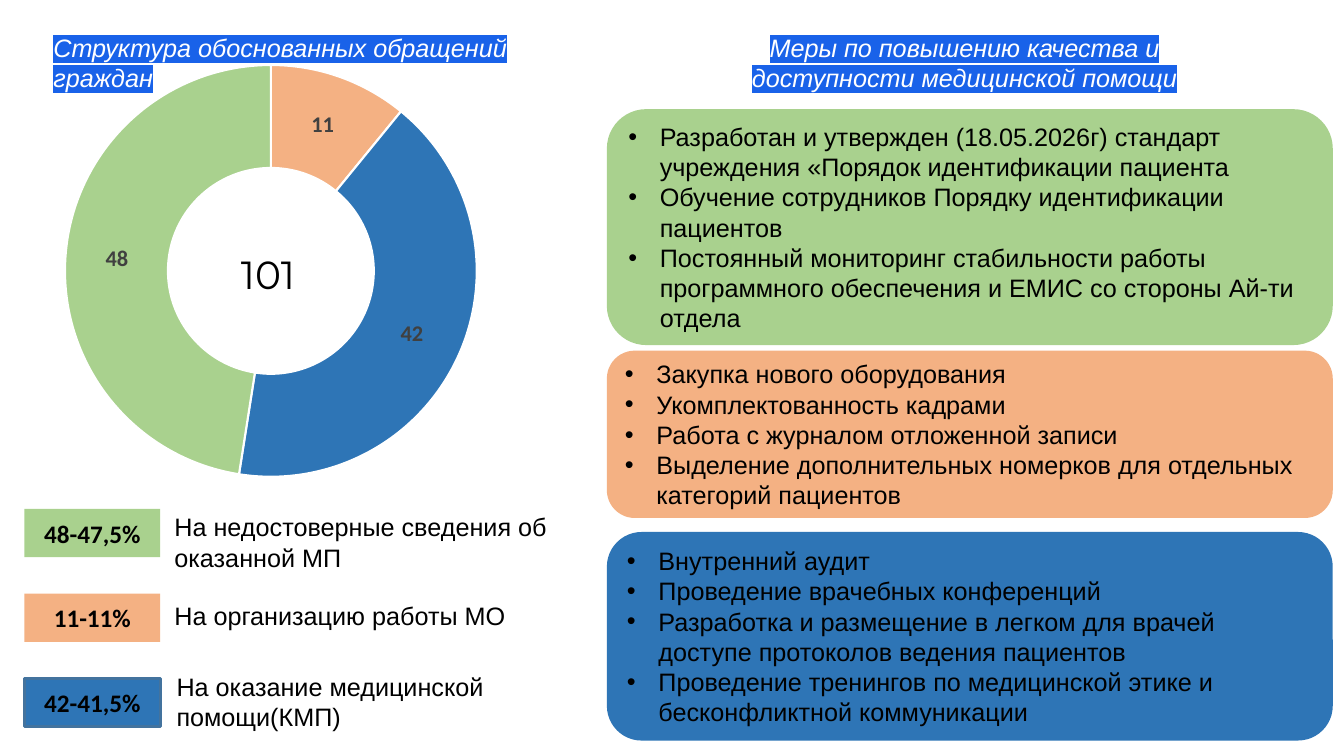
import pptx
import pptx.chart.data
import pptx.dml.color
import pptx.enum.chart
import pptx.enum.shapes
import pptx.enum.text
import pptx.oxml
import pptx.oxml.ns
import pptx.util

Pt = pptx.util.Pt
RGBColor = pptx.dml.color.RGBColor
SHAPES = pptx.enum.shapes.MSO_SHAPE
ALIGN = pptx.enum.text.PP_ALIGN
ANCHOR = pptx.enum.text.MSO_ANCHOR
AUTO_SIZE = pptx.enum.text.MSO_AUTO_SIZE

GREEN = RGBColor(0xA9, 0xD1, 0x8E)
ORANGE = RGBColor(0xF4, 0xB1, 0x83)
BLUE = RGBColor(0x2E, 0x75, 0xB6)
BLUE_EDGE = RGBColor(0x43, 0x73, 0x9E)
HIGHLIGHT = RGBColor(0x19, 0x62, 0xE9)
GREY = RGBColor(0x40, 0x40, 0x40)
BLACK = RGBColor(0, 0, 0)
WHITE = RGBColor(0xFF, 0xFF, 0xFF)


class AppealsSlide:
    """Hold the text style and the slide, and add each kind of element to it."""

    font = "Arial"
    number_font = "Calibri"
    size = 18
    indent = 22.5

    def __init__(self, slide):
        self.slide = slide

    def xml(self, tag, body):
        return pptx.oxml.parse_xml(f"<a:{tag} {pptx.oxml.ns.nsdecls('a')} {body}")

    def add_words(self, paragraph, words, color=BLACK, font=None, size=None,
                  bold=False, italic=False):
        run = paragraph.add_run()
        run.text = words
        run.font.name = font or self.font
        run.font.size = Pt(size or self.size)
        run.font.bold = bold
        run.font.italic = italic
        run.font.color.rgb = color
        return run

    def text(self, box, words, align=ALIGN.LEFT, **style):
        left, top, width, height = box
        frame = self.slide.shapes.add_textbox(Pt(left), Pt(top), Pt(width), Pt(height)).text_frame
        frame.word_wrap = True
        paragraph = frame.paragraphs[0]
        paragraph.alignment = align
        return frame, self.add_words(paragraph, words, **style)

    def title(self, box, words, align):
        run = self.text(box, words, align, color=WHITE, italic=True)[1]
        fill = run._r.get_or_add_rPr().find(pptx.oxml.ns.qn("a:solidFill"))
        fill.addnext(self.xml("highlight", f'><a:srgbClr val="{HIGHLIGHT}"/></a:highlight>'))

    def caption(self, box, words, **style):
        frame = self.text(box, words, **style)[0]
        frame.auto_size = AUTO_SIZE.SHAPE_TO_FIT_TEXT

    def block(self, kind, box, color, edge=None):
        left, top, width, height = box
        block = self.slide.shapes.add_shape(kind, Pt(left), Pt(top), Pt(width), Pt(height))
        block.shadow.inherit = False
        block.fill.solid()
        block.fill.fore_color.rgb = color
        if edge:
            block.line.color.rgb = edge
            block.line.width = Pt(2)
        else:
            block.line.fill.background()
        block.text_frame.word_wrap = True
        block.text_frame.vertical_anchor = ANCHOR.MIDDLE
        return block

    def key(self, box, words, color, edge):
        paragraph = self.block(SHAPES.RECTANGLE, box, color, edge).text_frame.paragraphs[0]
        paragraph.alignment = ALIGN.CENTER
        self.add_words(paragraph, words, font=self.number_font, bold=True)

    def measures(self, box, color, items):
        frame = self.block(SHAPES.ROUNDED_RECTANGLE, box, color).text_frame
        for index, item in enumerate(items):
            paragraph = frame.add_paragraph() if index else frame.paragraphs[0]
            paragraph.alignment = ALIGN.LEFT
            properties = paragraph._p.get_or_add_pPr()
            properties.set("marL", str(Pt(self.indent)))
            properties.set("indent", str(-Pt(self.indent)))
            properties.append(self.xml("buClr", f'><a:srgbClr val="{BLACK}"/></a:buClr>'))
            properties.append(self.xml("buFont", 'typeface="Arial"/>'))
            properties.append(self.xml("buChar", 'char="•"/>'))
            self.add_words(paragraph, item)

    def doughnut(self, box, values, colors):
        data = pptx.chart.data.CategoryChartData()
        data.categories = [str(number + 1) for number in range(len(values))]
        data.add_series("Series 1", values)
        left, top, width, height = box
        chart = self.slide.shapes.add_chart(
            pptx.enum.chart.XL_CHART_TYPE.DOUGHNUT,
            Pt(left), Pt(top), Pt(width), Pt(height), data).chart
        chart.has_legend = False
        chart.has_title = False
        chart.font.name = self.font
        chart.font.size = Pt(10)
        chart.font.color.rgb = BLACK
        plot = chart.plots[0]
        plot.vary_by_categories = True
        for index, color in enumerate(colors):
            slice_format = plot.series[0].points[index].format
            slice_format.fill.solid()
            slice_format.fill.fore_color.rgb = color
            slice_format.line.color.rgb = WHITE
            slice_format.line.width = Pt(1.5)
        labels = plot.series[0].data_labels
        labels.show_value = True
        labels.show_percentage = False
        labels.font.name = self.number_font
        labels.font.size = Pt(16)
        labels.font.bold = True
        labels.font.color.rgb = GREY


def main():
    deck = pptx.Presentation()
    deck.slide_width, deck.slide_height = Pt(960), Pt(540)
    page = AppealsSlide(deck.slides.add_slide(deck.slide_layouts[6]))

    page.title((31, 19.5, 402.5, 23.5), "Структура обоснованных обращений граждан", ALIGN.LEFT)
    page.doughnut((-45.5, 36.5, 478, 314), (11, 42, 48), (ORANGE, BLUE, GREEN))

    legend = [
        ("48-47,5%", GREEN, None, (117.5, 362, 363.5, 50.5),
         "На недостоверные сведения об оказанной МП"),
        ("11-11%", ORANGE, None, (117.5, 425.5, 388, 29),
         "На организацию работы МО"),
        ("42-41,5%", BLUE, BLUE_EDGE, (119, 476, 320.5, 50.5),
         "На оказание медицинской помощи(КМП)"),
    ]
    for row, (share, color, edge, caption_box, reason) in enumerate(legend):
        page.key((17.5, 363.5 + 60.5 * row, 97, 34.5), share, color, edge)
        page.caption(caption_box, reason)

    page.title((494, 19.5, 390, 17.5),
               "Меры по повышению качества и доступности медицинской помощи", ALIGN.CENTER)
    measure_groups = [
        (78, 168.5, GREEN, [
            "Разработан и утвержден (18.05.2026г) стандарт учреждения «Порядок идентификации пациента",
            "Обучение сотрудников Порядку идентификации пациентов",
            "Постоянный мониторинг стабильности работы программного обеспечения и ЕМИС "
            "со стороны Ай-ти отдела"]),
        (250.5, 119.5, ORANGE, [
            "Закупка нового оборудования",
            "Укомплектованность кадрами",
            "Работа с журналом отложенной записи",
            "Выделение дополнительных номерков для отдельных категорий пациентов"]),
        (380, 149, BLUE, [
            "Внутренний аудит",
            "Проведение врачебных конференций",
            "Разработка и размещение в легком для врачей доступе протоколов ведения пациентов",
            "Проведение тренингов по медицинской этике и бесконфликтной коммуникации"]),
    ]
    for top, height, color, items in measure_groups:
        page.measures((433.5, top, 518.5, height), color, items)

    page.caption((165, 175, 186, 41), "101", font="Montserrat", size=28)
    deck.save("out.pptx")


if __name__ == "__main__":
    main()
